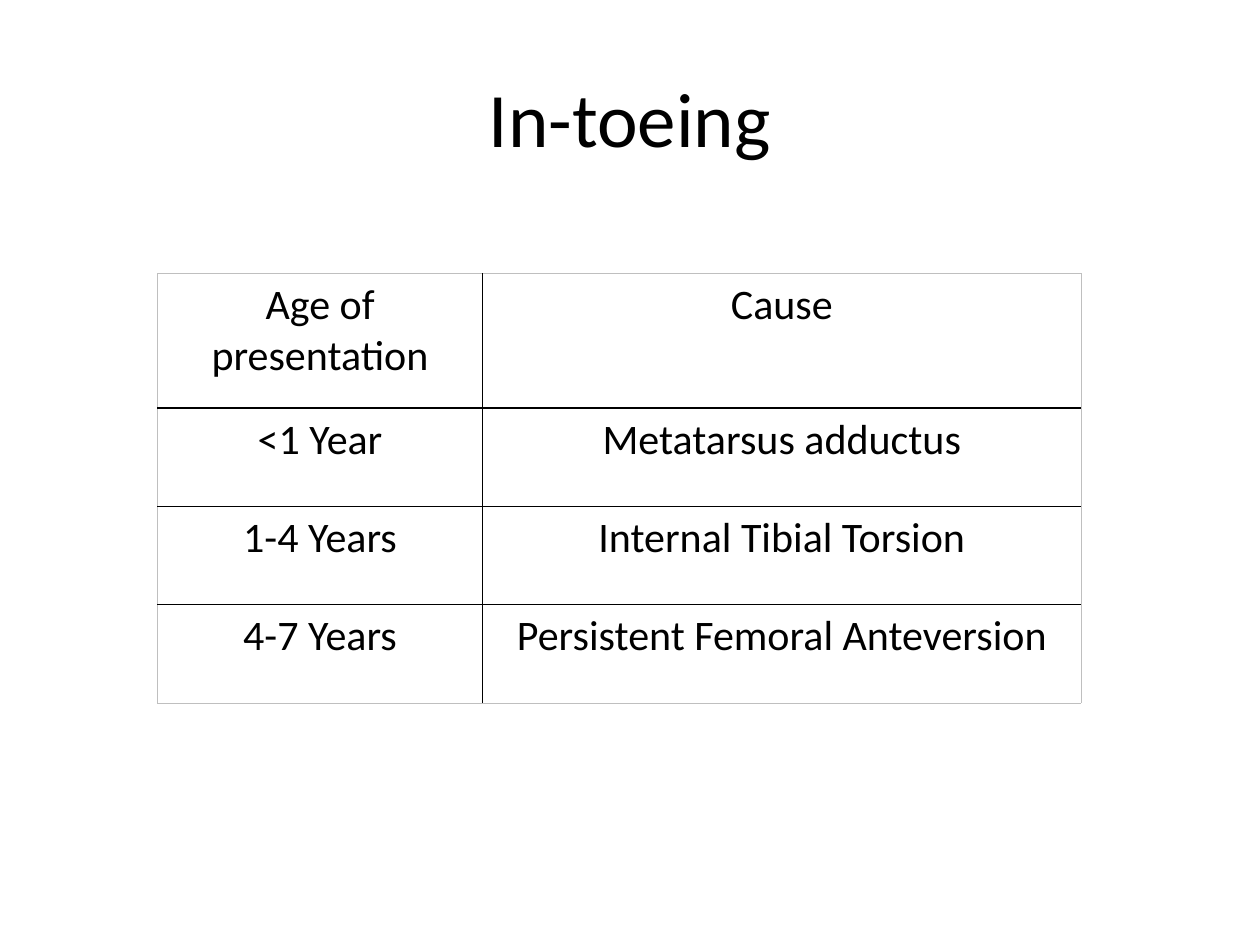
from dataclasses import dataclass

from lxml.etree import SubElement
from pptx import Presentation
from pptx.dml.color import RGBColor
from pptx.enum.text import MSO_ANCHOR, PP_ALIGN
from pptx.oxml.ns import qn
from pptx.util import Inches, Pt

BLACK, GREY = "000000", "BFBFBF"
COLUMN_WIDTHS = (2.58, 4.75)
ROW_HEIGHTS = (1.07, 0.78, 0.78, 0.78)


@dataclass(frozen=True)
class Finding:
    age: str
    cause: str


@dataclass(frozen=True)
class Border:
    color: str
    points: float


FINDINGS = (
    Finding("Age of presentation", "Cause"),
    Finding("<1 Year", "Metatarsus adductus"),
    Finding("1-4 Years", "Internal Tibial Torsion"),
    Finding("4-7 Years", "Persistent Femoral Anteversion"),
)
INNER, OUTER = Border(BLACK, 1), Border(GREY, 0.5)


def color(value: str) -> RGBColor:
    return RGBColor.from_string(value)


def write(frame, text: str, size: float) -> None:
    paragraph = frame.paragraphs[0]
    paragraph.alignment = PP_ALIGN.CENTER
    span = paragraph.add_run()
    span.text = text
    font_format = {"name": "Calibri", "size": Pt(size), "bold": False}
    for name, value in font_format.items():
        setattr(span.font, name, value)
    span.font.color.rgb = color(BLACK)


def add_border(cell, side: str, border: Border) -> None:
    """Draw one side of a cell: L, R, T or B."""
    properties = cell._tc.get_or_add_tcPr()
    line = SubElement(properties, qn(f"a:ln{side}"), w=str(Pt(border.points)))
    fill = SubElement(line, qn("a:solidFill"))
    SubElement(fill, qn("a:srgbClr"), val=border.color)


def add_title(page, text: str) -> None:
    box = page.shapes.add_textbox(Inches(0.5), Inches(0.3), Inches(9), Inches(1.25))
    frame = box.text_frame
    frame.word_wrap = True
    frame.vertical_anchor = MSO_ANCHOR.MIDDLE
    write(frame, text, 44)


def add_findings(page, findings: tuple[Finding, ...]) -> None:
    last_row, last_column = len(findings) - 1, len(COLUMN_WIDTHS) - 1
    table = page.shapes.add_table(
        len(findings), len(COLUMN_WIDTHS), Inches(1.25), Inches(2.17),
        Inches(sum(COLUMN_WIDTHS)), Inches(sum(ROW_HEIGHTS)),
    ).table
    table.first_row = table.horz_banding = False
    for column, width in zip(table.columns, COLUMN_WIDTHS):
        column.width = Inches(width)
    for row, height in zip(table.rows, ROW_HEIGHTS):
        row.height = Inches(height)
    for row, finding in enumerate(findings):
        for column, text in enumerate((finding.age, finding.cause)):
            cell = table.cell(row, column)
            write(cell.text_frame, text, 24)
            at_edge = {"L": column == 0, "R": column == last_column,
                       "T": row == 0, "B": row == last_row}
            for side, is_outer in at_edge.items():
                add_border(cell, side, OUTER if is_outer else INNER)
            cell.fill.background()


def main() -> None:
    deck = Presentation()
    deck.slide_width, deck.slide_height = Inches(10), Inches(7.5)
    page = deck.slides.add_slide(deck.slide_layouts[6])
    add_title(page, "In-toeing")
    add_findings(page, FINDINGS)
    deck.save("out.pptx")


if __name__ == "__main__":
    main()
